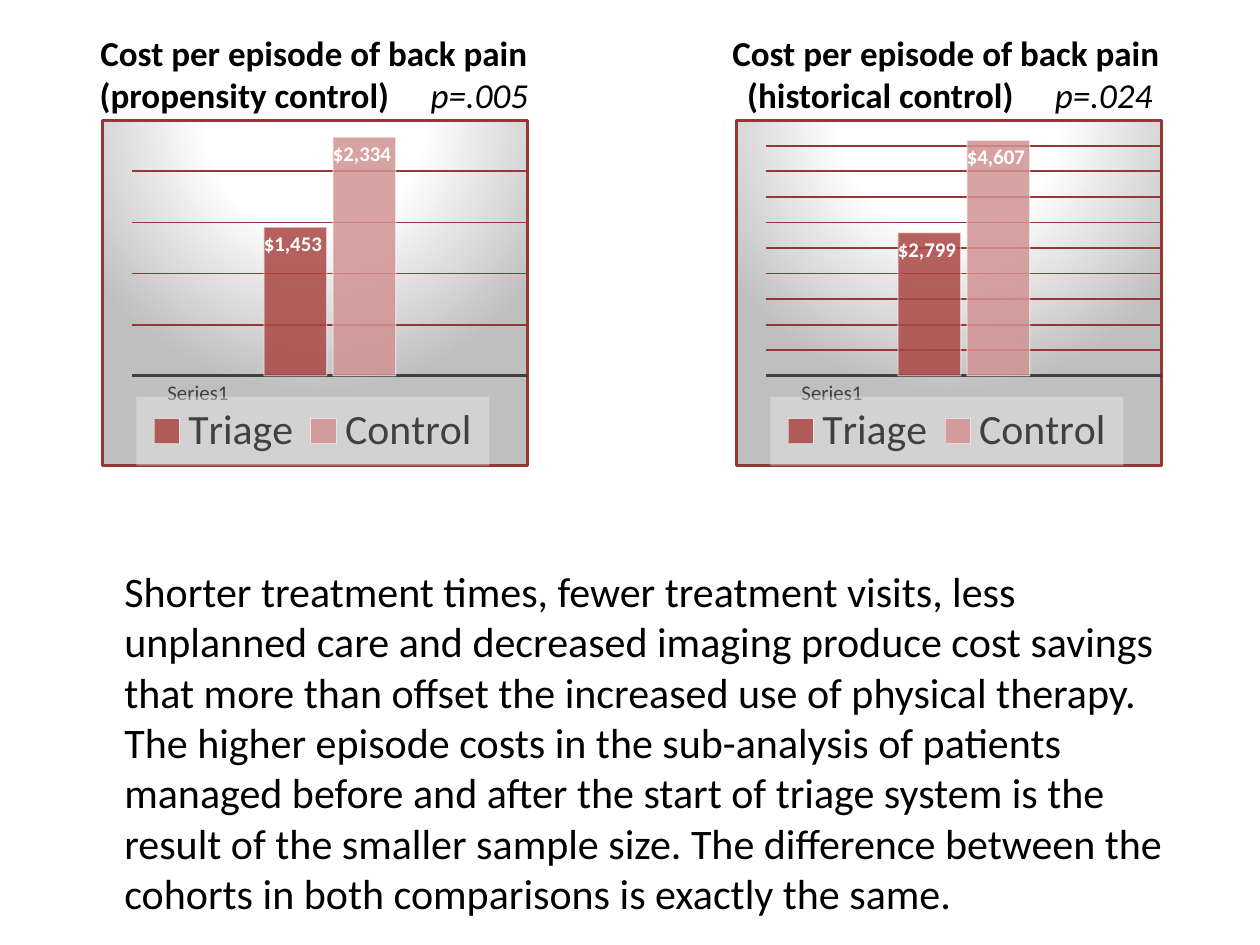
from dataclasses import dataclass

from lxml import etree
from pptx import Presentation
from pptx.chart.data import CategoryChartData
from pptx.dml.color import RGBColor
from pptx.enum.chart import XL_CHART_TYPE, XL_LABEL_POSITION, XL_LEGEND_POSITION, XL_TICK_MARK
from pptx.enum.text import MSO_AUTO_SIZE, PP_ALIGN
from pptx.oxml import parse_xml
from pptx.oxml.ns import nsdecls, qn
from pptx.util import Emu, Pt

COLUMNS = XL_CHART_TYPE.COLUMN_CLUSTERED
INSIDE_END = XL_LABEL_POSITION.INSIDE_END
BOTTOM = XL_LEGEND_POSITION.BOTTOM
NO_TICK = XL_TICK_MARK.NONE
FIT_SHAPE = MSO_AUTO_SIZE.SHAPE_TO_FIT_TEXT
CENTER = PP_ALIGN.CENTER

EMU_PER_PX = 914400 / 126
DOLLARS = '"$"#,##0_);[Red]\\("$"#,##0\\)'


@dataclass(frozen=True)
class Theme:
    font: str = "Calibri"
    text: str = "000000"
    muted: str = "404040"
    accent: str = "953735"
    triage: str = "AA4744"
    control: str = "D19392"
    light: str = "FFFFFF"
    shade: str = "BFBFBF"
    legend_fill: str = "F2F2F2"
    body_size: int = 24
    title_size: int = 20
    label_size: int = 12
    chart_size: int = 10


THEME = Theme()


def px(length):
    return Emu(round(length * EMU_PER_PX))


def set_font(font, size, color, bold=None):
    font.name = THEME.font
    font.size = Pt(size)
    font.color.rgb = RGBColor.from_string(color)
    font.bold = bold


def set_line(line, color, width):
    line.color.rgb = RGBColor.from_string(color)
    line.width = Pt(width)


def add_text_box(slide, left, top, width, height):
    box = slide.shapes.add_textbox(px(left), px(top), px(width), px(height))
    frame = box.text_frame
    frame.word_wrap = True
    frame.auto_size = FIT_SHAPE
    return frame


def add_chart_title(slide, left, group, p_value):
    frame = add_text_box(slide, left, 25, 580, 97)
    heading = frame.paragraphs[0]
    heading.text = "Cost per episode of back pain"
    detail = frame.add_paragraph()
    detail.add_run().text = group
    gap = detail.add_run()
    gap.text = " "
    gap._r.get_or_add_rPr().set("spc", "1900")
    result = detail.add_run()
    result.text = p_value
    result.font.bold = False
    result.font.italic = True
    for paragraph in frame.paragraphs:
        paragraph.alignment = CENTER
        set_font(paragraph.font, THEME.title_size, THEME.text, bold=True)


def add_body(slide, text):
    paragraph = add_text_box(slide, 112, 559, 1081, 369).paragraphs[0]
    paragraph.text = text
    set_font(paragraph.font, THEME.body_size, THEME.text)


def manual_layout(x, y, width, height, inner=False):
    """Return a c:layout whose lengths are fractions of the chart."""
    target = '<c:layoutTarget val="inner"/>' if inner else ""
    return parse_xml(
        f'<c:layout {nsdecls("c")}><c:manualLayout>{target}'
        '<c:xMode val="edge"/><c:yMode val="edge"/>'
        f'<c:x val="{x}"/><c:y val="{y}"/><c:w val="{width}"/><c:h val="{height}"/>'
        '</c:manualLayout></c:layout>')


def remove_layout(element):
    for layout in element.findall(qn("c:layout")):
        element.remove(layout)


def style_background(chart):
    """Fill the chart with a radial gradient and frame it."""
    stops = "".join(
        f'<a:gs pos="{position * 1000}"><a:srgbClr val="{color}"/></a:gs>'
        for position, color in ((0, THEME.light), (39, THEME.light), (100, THEME.shade)))
    properties = parse_xml(
        f'<c:spPr {nsdecls("c", "a")}><a:gradFill><a:gsLst>{stops}</a:gsLst>'
        '<a:path path="circle"><a:fillToRect l="50000" t="-80000" r="50000" b="180000"/></a:path>'
        f'</a:gradFill><a:ln w="{Pt(1.5)}"><a:solidFill><a:srgbClr val="{THEME.accent}"/>'
        '</a:solidFill></a:ln></c:spPr>')
    chart._chartSpace.find(qn("c:chart")).addnext(properties)


def style_axes(chart, maximum):
    category_axis = chart.category_axis
    category_axis.major_tick_mark = NO_TICK
    category_axis.minor_tick_mark = NO_TICK
    set_font(category_axis.tick_labels.font, THEME.label_size, THEME.muted)
    set_line(category_axis.format.line, THEME.muted, 1.5)
    value_axis = chart.value_axis
    value_axis.minimum_scale = 0
    value_axis.maximum_scale = maximum
    value_axis.major_unit = 500
    value_axis.has_major_gridlines = True
    set_line(value_axis.major_gridlines.format.line, THEME.accent, 1)
    value_axis.tick_labels.number_format = DOLLARS
    value_axis.tick_labels.number_format_is_linked = False
    value_axis.visible = False


def style_series(series, color):
    series.format.fill.solid()
    series.format.fill.fore_color.rgb = RGBColor.from_string(color)
    set_line(series.format.line, THEME.light, 0.75)
    fill_and_line = series._element.spPr.iter(qn("a:srgbClr"))
    for paint, opacity in zip(list(fill_and_line), (85, 50)):
        etree.SubElement(paint, qn("a:alpha")).set("val", str(opacity * 1000))
    labels = series.data_labels
    labels.show_value = True
    labels.position = INSIDE_END
    labels.number_format = DOLLARS
    labels.number_format_is_linked = False
    set_font(labels.font, THEME.label_size, THEME.light, bold=True)


def style_legend(chart):
    chart.has_legend = True
    legend = chart.legend
    legend.position = BOTTOM
    legend.include_in_layout = False
    set_font(legend.font, THEME.body_size, THEME.muted)
    remove_layout(legend._element)
    overlay = legend._element.find(qn("c:overlay"))
    overlay.addprevious(manual_layout(0.08, 0.8, 0.83, 0.2))
    overlay.addnext(parse_xml(
        f'<c:spPr {nsdecls("c", "a")}><a:solidFill><a:srgbClr val="{THEME.legend_fill}">'
        '<a:alpha val="39000"/></a:srgbClr></a:solidFill></c:spPr>'))


def add_cost_chart(slide, left, triage, control, maximum):
    data = CategoryChartData(number_format=DOLLARS)
    data.categories = ["Series1", "", ""]
    data.add_series("Triage", (None, triage, None))
    data.add_series("Control", (None, control, None))
    chart = slide.shapes.add_chart(COLUMNS, px(left), px(119), px(428), px(348), data).chart
    chart.has_title = False
    set_font(chart.font, THEME.chart_size, THEME.text)
    plot = chart.plots[0]
    plot.vary_by_categories = False
    plot.gap_width = 0
    plot.overlap = -10
    for series, color in zip(plot.series, (THEME.triage, THEME.control)):
        style_series(series, color)
    style_axes(chart, maximum)
    style_legend(chart)
    style_background(chart)
    plot_area = chart._chartSpace.find(".//" + qn("c:plotArea"))
    remove_layout(plot_area)
    plot_area.insert(0, manual_layout(0.07, 0, 0.93, 0.74, inner=True))


def main():
    presentation = Presentation()
    presentation.slide_width = px(1260)
    presentation.slide_height = px(945)
    slide = presentation.slides.add_slide(presentation.slide_layouts[6])
    comparisons = (
        (101, 24, "(propensity control)", "p=.005", 1453, 2334, 2500),
        (735, 656, " (historical control)", "p=.024", 2799, 4607, 5000),
    )
    for chart_left, title_left, group, p_value, triage, control, maximum in comparisons:
        add_cost_chart(slide, chart_left, triage, control, maximum)
        add_chart_title(slide, title_left, group, p_value)
    add_body(slide, (
        "Shorter treatment times, fewer treatment visits, less unplanned care and decreased "
        "imaging produce cost savings that more than offset the increased use of physical "
        "therapy. The higher episode costs in the sub-analysis of patients managed before and "
        "after the start of triage system is the result of the smaller sample size. The "
        "difference between the cohorts in both comparisons is exactly the same."))
    presentation.save("out.pptx")


if __name__ == "__main__":
    main()
